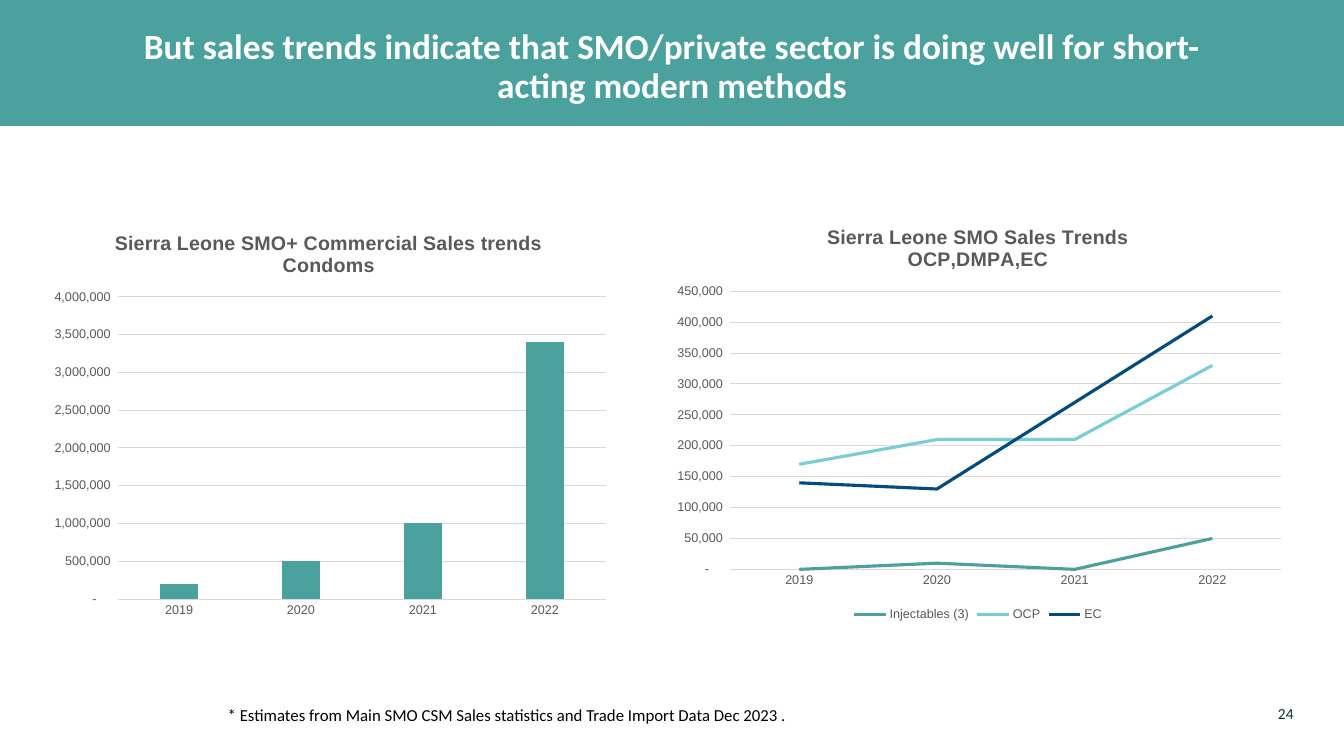
from pptx import Presentation
from pptx.chart.data import CategoryChartData as ChartData
from pptx.dml.color import RGBColor
from pptx.enum.chart import XL_CHART_TYPE as Kind
from pptx.enum.chart import XL_LEGEND_POSITION as Spot
from pptx.enum.chart import XL_TICK_MARK as Tick
from pptx.enum.shapes import MSO_SHAPE as Shape
from pptx.enum.text import MSO_ANCHOR as Anchor
from pptx.enum.text import PP_ALIGN as Align
from pptx.oxml import parse_xml
from pptx.oxml.ns import nsdecls
from pptx.util import Inches, Pt

TEAL, SKY, NAVY = "4AA19E", "78CDD7", "044B7F"
GRAY, RULE = "595959", "D9D9D9"
YEARS = ["2019", "2020", "2021", "2022"]
COUNT = '_(* #,##0_);_(* \\(#,##0\\);_(* "-"??_);_(@_)'


def paint(color, code):
    """Set a color format from a hex string."""
    color.rgb = RGBColor.from_string(code)


def style(font, code, **look):
    """Apply a color and a set of font values."""
    for key, value in look.items():
        setattr(font, key, value)
    paint(font.color, code)


def rule(line, code, width):
    """Give a line its color and width in points."""
    line.width = Pt(width)
    paint(line.color, code)


def add_band(slide):
    """Put the title band behind the title."""
    band = slide.shapes.add_shape(Shape.RECTANGLE, 0, 0, Inches(13.33), Inches(1.25))
    band.shadow.inherit = False
    band.fill.solid()
    paint(band.fill.fore_color, TEAL)
    band.line.fill.background()
    slide.shapes.title.element.addprevious(band.element)


def set_title(slide, text):
    """Place and format the slide title."""
    title = slide.shapes.title
    place = {"left": 1.09, "top": 0.25, "width": 11.15, "height": 0.84}
    for key, value in place.items():
        setattr(title, key, Inches(value))
    frame = title.text_frame
    frame.text = text
    frame.word_wrap = True
    frame.vertical_anchor = Anchor.MIDDLE
    para = frame.paragraphs[0]
    para.alignment = Align.CENTER
    para.line_spacing = 0.9
    style(para.font, "FFFFFF", name="Calibri", size=Pt(25.2), bold=True)


def add_text(slide, box, text, code, size, align, pad):
    """Add a text box with one line of text."""
    frame = slide.shapes.add_textbox(*map(Inches, box)).text_frame
    frame.word_wrap = True
    frame.margin_left = frame.margin_right = Inches(pad)
    frame.margin_top = frame.margin_bottom = Inches(pad / 2)
    para = frame.paragraphs[0]
    para.text = text
    para.alignment = align
    style(para.font, code, name="Calibri", size=Pt(size))


def set_plot(chart, area):
    """Fix the inner plot area as shares of the chart."""
    plot = chart.element.xpath("c:chart/c:plotArea")[0]
    for old in plot.xpath("c:layout"):
        plot.remove(old)
    modes = "".join(f'<c:{key}Mode val="edge"/>' for key in "xy")
    sides = "".join(f'<c:{key} val="{share}"/>' for key, share in zip("xywh", area))
    plot.insert(0, parse_xml(
        f'<c:layout {nsdecls("c")}><c:manualLayout><c:layoutTarget val="inner"/>'
        f"{modes}{sides}</c:manualLayout></c:layout>"))


def set_axes(chart, top, step):
    """Format both axes and the grid lines."""
    for axis in (chart.category_axis, chart.value_axis):
        axis.major_tick_mark = axis.minor_tick_mark = Tick.NONE
        style(axis.tick_labels.font, GRAY, name="Arial", size=Pt(9))
    rule(chart.category_axis.format.line, RULE, 0.75)
    axis = chart.value_axis
    axis.format.line.fill.background()
    axis.has_major_gridlines = True
    rule(axis.major_gridlines.format.line, RULE, 0.75)
    scale = {"minimum_scale": 0, "maximum_scale": top, "major_unit": step}
    for key, value in scale.items():
        setattr(axis, key, value)
    axis.tick_labels.number_format = COUNT
    axis.tick_labels.number_format_is_linked = False


def add_chart(slide, kind, box, area, title, sales, top, step):
    """Add a sales chart with its title and axes."""
    data = ChartData(number_format=COUNT)
    data.categories = YEARS
    for name, values in sales.items():
        data.add_series(name, values)
    chart = slide.shapes.add_chart(kind, *map(Inches, box), data).chart
    style(chart.font, "000000", name="Arial", size=Pt(10))
    chart.has_title = True
    chart.chart_title.include_in_layout = False
    frame = chart.chart_title.text_frame
    frame.text = title
    for para in frame.paragraphs:
        style(para.font, GRAY, name="Arial", size=Pt(14), bold=True)
    chart.has_legend = False
    chart.plots[0].vary_by_categories = False
    set_axes(chart, top, step)
    set_plot(chart, area)
    return chart


def add_bars(slide):
    """Add the condom sales columns."""
    chart = add_chart(
        slide, Kind.COLUMN_CLUSTERED, (0.39, 2.12, 5.74, 4.09), (0.136, 0.202, 0.843, 0.733),
        "Sierra Leone SMO+ Commercial Sales trends\nCondoms",
        {"Series 1": (200000, 500000, 1000000, 3400000)}, 4000000, 500000)
    plot = chart.plots[0]
    plot.gap_width, plot.overlap = 219, -27
    fill = plot.series[0].format.fill
    fill.solid()
    paint(fill.fore_color, TEAL)


def add_lines(slide):
    """Add the sales lines for the other methods."""
    sales = {
        "Injectables (3)": (0, 10000, 0, 50000),
        "OCP": (170000, 210000, 210000, 330000),
        "EC": (140000, 130000, 270000, 410000),
    }
    chart = add_chart(
        slide, Kind.LINE, (6.56, 2.06, 6.28, 4.15), (0.109, 0.2, 0.87, 0.665),
        "Sierra Leone SMO Sales Trends\nOCP,DMPA,EC", sales, 450000, 50000)
    for line, code in zip(chart.plots[0].series, (TEAL, SKY, NAVY)):
        line.smooth = False
        rule(line.format.line, code, 2.25)
    chart.has_legend = True
    chart.legend.position = Spot.BOTTOM
    chart.legend.include_in_layout = False
    style(chart.legend.font, GRAY, name="Arial", size=Pt(9))


def main():
    """Build the slide and save it."""
    deck = Presentation()
    deck.slide_width, deck.slide_height = Inches(13.33), Inches(7.5)
    slide = deck.slides.add_slide(deck.slide_layouts[5])
    add_band(slide)
    set_title(slide, "But sales trends indicate that SMO/private sector is doing well "
                     "for short-acting modern methods")
    add_text(slide, (12.34, 6.99, 0.49, 0.2), "24", "112E38", 11, Align.RIGHT, 0)
    add_bars(slide)
    add_lines(slide)
    add_text(slide, (2.16, 6.94, 10.1, 0.5),
             "* Estimates from Main SMO CSM Sales statistics and Trade Import Data Dec 2023 .",
             "000000", 12, Align.LEFT, 0.1)
    deck.save("out.pptx")


if __name__ == "__main__":
    main()
